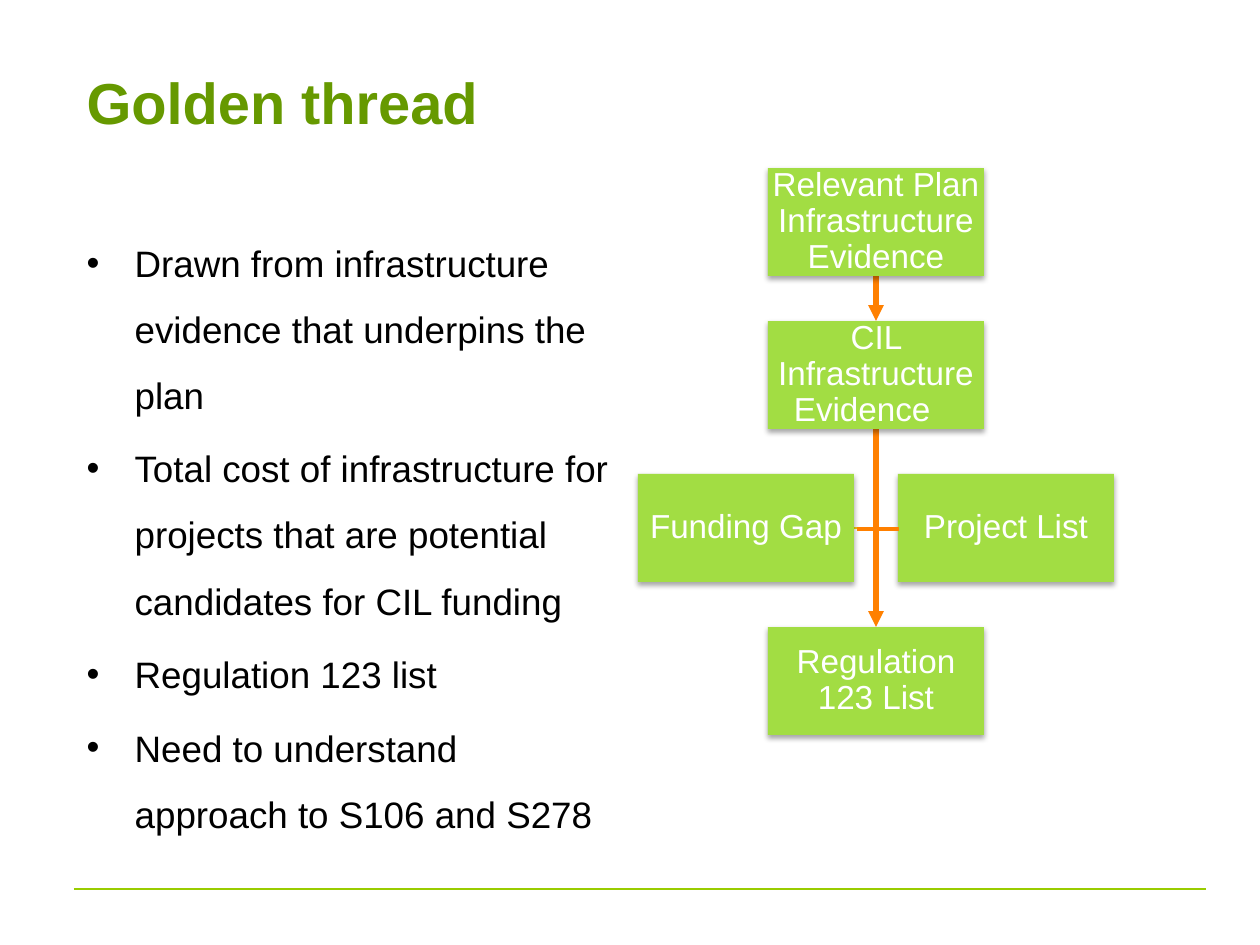
"""Build the Golden thread slide: a bullet list beside an evidence flow diagram."""
from lxml.etree import SubElement
from pptx import Presentation
from pptx.dml.color import RGBColor
from pptx.enum.shapes import MSO_CONNECTOR as Connector, MSO_SHAPE as Preset
from pptx.enum.text import MSO_ANCHOR as Anchor, PP_ALIGN as Align
from pptx.oxml import parse_xml
from pptx.oxml.ns import nsdecls, qn
from pptx.util import Emu, Pt

TITLE = "Golden thread"
BULLETS = [
    "Drawn from infrastructure evidence that underpins the plan",
    "Total cost of infrastructure for projects that are potential candidates for CIL funding",
    "Regulation 123 list",
    "Need to understand approach to S106 and S278",
]
BOXES = [
    ("Relevant Plan Infrastructure Evidence", 0, 0),
    ("CIL Infrastructure Evidence   ", 0, 1),
    ("Regulation 123 List", 0, 3),
    ("Funding Gap", -1, 2),
    ("Project List", 1, 2),
]
ARROWS = [(1, 3), (0, 1)]

DARK_GREEN = RGBColor(0x66, 0x99, 0x00)
RULE_GREEN = RGBColor(0x99, 0xCC, 0x00)
BOX_GREEN = RGBColor(0xA2, 0xDD, 0x43)
ORANGE = RGBColor(0xFF, 0x80, 0x00)
GOLD = RGBColor(0xEF, 0xCC, 0x0E)
BLACK = RGBColor(0, 0, 0)
WHITE = RGBColor(0xFF, 0xFF, 0xFF)

BOX_WIDTH, BOX_HEIGHT = 216, 108
CENTRE, TOP = 876, 168
COLUMN_STEP, ROW_STEP = 130, 153
SHADOW = (
    f'<a:effectLst {nsdecls("a")}><a:outerShdw blurRad="39370" dist="22860" dir="5400000" '
    'rotWithShape="0"><a:srgbClr val="000000"><a:alpha val="35000"/></a:srgbClr>'
    '</a:outerShdw></a:effectLst>'
)


def px(length):
    return Emu(round(length * 914400 / 126))


def place(shape, left, top, width, height):
    shape.left, shape.top, shape.width, shape.height = map(px, (left, top, width, height))


def format_runs(paragraph, size, color, bold=False):
    for run in paragraph.runs:
        run.font.name, run.font.size, run.font.bold = "Arial", Pt(size), bold
        run.font.color.rgb = color


def add_line(slide, start, end, color, width, arrow=False):
    line = slide.shapes.add_connector(Connector.STRAIGHT, *map(px, start + end))
    line.line.color.rgb, line.line.width = color, Pt(width)
    if arrow:
        SubElement(line.line._get_or_add_ln(), qn("a:tailEnd"), type="triangle")
    SubElement(line._element.spPr, qn("a:effectLst"))


def add_title(slide):
    title = slide.shapes.title
    place(title, 74, 38, 1134, 127)
    frame = title.text_frame
    frame.text, frame.vertical_anchor = TITLE, Anchor.MIDDLE
    frame.paragraphs[0].alignment = Align.LEFT
    format_runs(frame.paragraphs[0], 33, DARK_GREEN, True)


def add_bullets(slide):
    body = slide.placeholders[1]
    place(body, 74, 212, 556, 488)
    body.text_frame.text = "\n".join(BULLETS)
    for paragraph in body.text_frame.paragraphs:
        paragraph.line_spacing, paragraph.space_before = 1.5, Pt(4.2)
        properties = paragraph._p.get_or_add_pPr()
        properties.set("marL", str(px(48)))
        properties.set("indent", str(-px(48)))
        SubElement(properties, qn("a:buChar"), char="•")
        format_runs(paragraph, 21, BLACK)


def add_box(slide, text, column, row):
    left = CENTRE + column * COLUMN_STEP - BOX_WIDTH // 2
    top = TOP + row * ROW_STEP
    box = slide.shapes.add_shape(Preset.RECTANGLE, *map(px, (left, top, BOX_WIDTH, BOX_HEIGHT)))
    box.fill.solid()
    box.fill.fore_color.rgb = BOX_GREEN
    box.line.fill.background()
    box._element.spPr.append(parse_xml(SHADOW))
    frame = box.text_frame
    frame.text, frame.word_wrap, frame.vertical_anchor = text, True, Anchor.MIDDLE
    frame.margin_left = frame.margin_right = frame.margin_top = frame.margin_bottom = px(1)
    paragraph = frame.paragraphs[0]
    paragraph.alignment, paragraph.line_spacing = Align.CENTER, 0.9
    format_runs(paragraph, 19, WHITE)


def add_diagram(slide):
    middle = TOP + 2 * ROW_STEP + BOX_HEIGHT // 2
    for side in (1, -1):
        edge = CENTRE + side * (COLUMN_STEP - BOX_WIDTH // 2)
        add_line(slide, (CENTRE, middle), (edge, middle), GOLD, 0.75)
    for first, last in ARROWS:
        start = (CENTRE, TOP + first * ROW_STEP + BOX_HEIGHT)
        add_line(slide, start, (CENTRE, TOP + last * ROW_STEP), ORANGE, 3, True)
    for text, column, row in BOXES:
        add_box(slide, text, column, row)
    add_line(slide, (857, 529), (899, 529), ORANGE, 2)


def main():
    presentation = Presentation()
    presentation.slide_width, presentation.slide_height = px(1260), px(945)
    slide = presentation.slides.add_slide(presentation.slide_layouts[1])
    add_line(slide, (74, 889), (1206, 889), RULE_GREEN, 0.75)
    add_title(slide)
    add_bullets(slide)
    add_diagram(slide)
    presentation.save("out.pptx")


if __name__ == "__main__":
    main()
